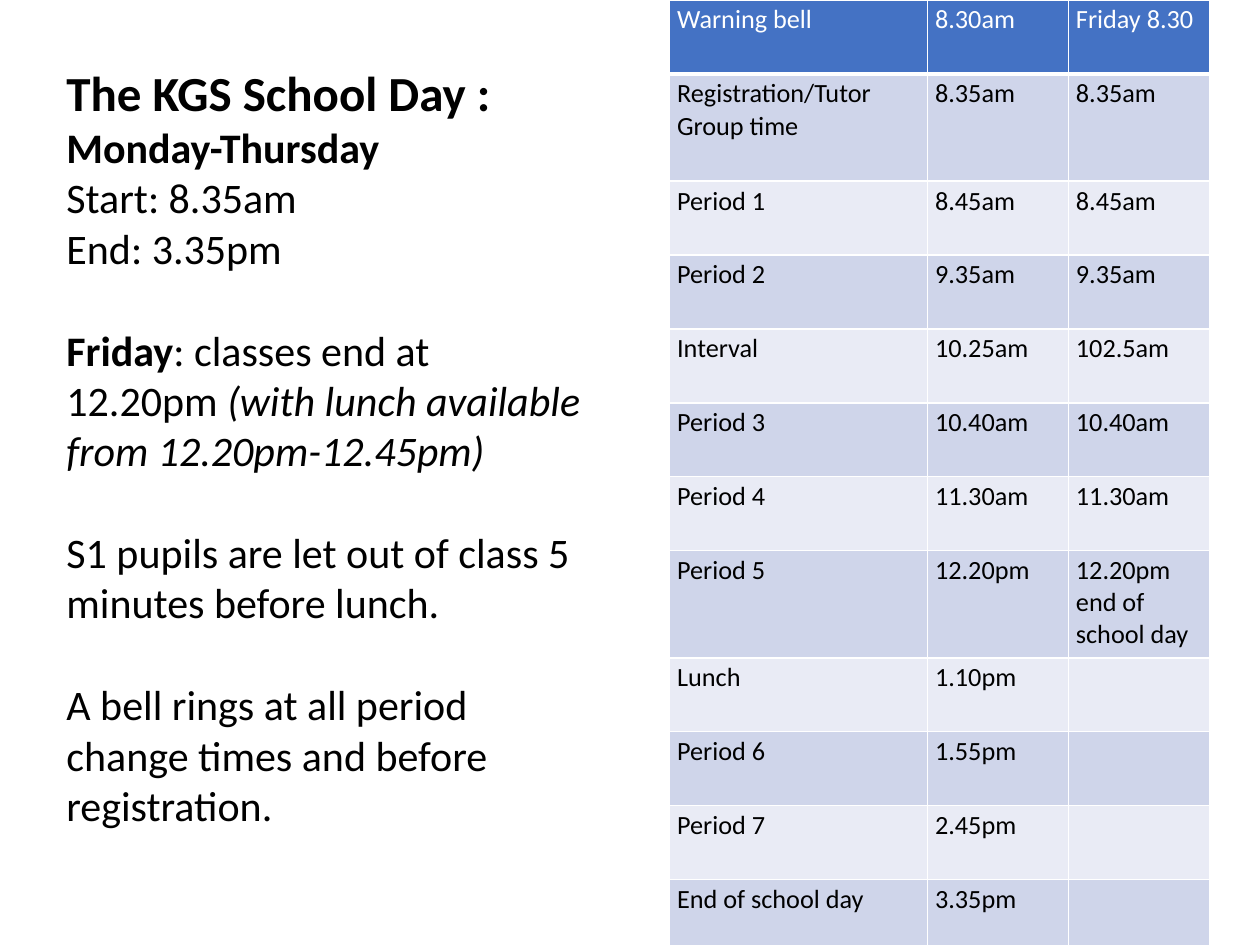
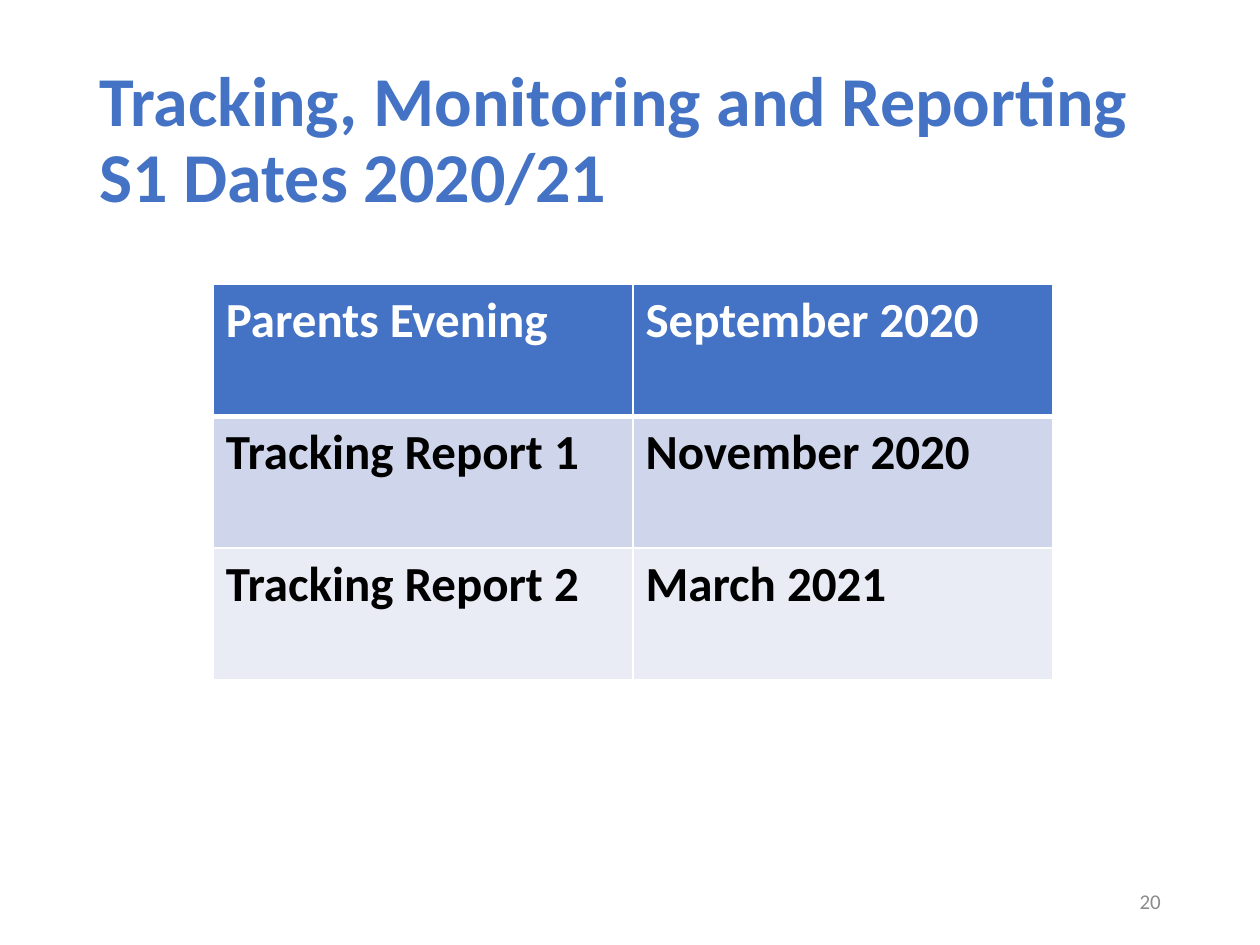
from lxml.etree import SubElement
from pptx import Presentation
from pptx.dml.color import RGBColor
from pptx.enum.text import MSO_ANCHOR, MSO_AUTO_SIZE, PP_ALIGN
from pptx.oxml.ns import qn
from pptx.util import Cm, Pt

COLORS = {
    "accent": "4472C4",
    "band_dark": "CFD5EA",
    "band_light": "E9EBF5",
    "text": "000000",
    "white": "FFFFFF",
    "muted": "8C8C8C",
}
FONT = "Calibri"
TITLE_ONLY, BLANK = 5, 6


class Deck:
    """Holds the shared style and the current slide."""

    def __init__(self):
        self.prs = Presentation()
        self.prs.slide_width, self.prs.slide_height = Cm(25.4), Cm(19.05)
        self.s = None

    def new_slide(self, layout):
        self.s = self.prs.slides.add_slide(self.prs.slide_layouts[layout])

    def style(self, p, size, color="text", bold=None):
        p.font.name, p.font.size, p.font.bold = FONT, Pt(size), bold
        p.font.color.rgb = RGBColor.from_string(COLORS[color])

    def title(self, text):
        sp = self.s.shapes.title
        sp.left, sp.top, sp.width, sp.height = Cm(1.75), Cm(1.02), Cm(21.9), Cm(3.68)
        tf = sp.text_frame
        tf.auto_size = MSO_AUTO_SIZE.NONE
        tf.vertical_anchor = MSO_ANCHOR.MIDDLE
        tf.text = text
        p = tf.paragraphs[0]
        p.alignment, p.line_spacing = PP_ALIGN.LEFT, 0.9
        self.style(p, 40, "accent", True)

    def text_box(self, left, top, width, height):
        tf = self.s.shapes.add_textbox(Cm(left), Cm(top), Cm(width), Cm(height)).text_frame
        tf.word_wrap = True
        return tf

    def page_number(self, number):
        tf = self.text_box(17.93, 17.65, 5.72, 1.02)
        tf.vertical_anchor = MSO_ANCHOR.MIDDLE
        p = tf.paragraphs[0]
        p.text = str(number)
        p.alignment = PP_ALIGN.RIGHT
        self.style(p, 12, "muted")

    def paragraphs(self, tf, items):
        """Each item: size, space before, list of (text, bold, italic)."""
        for i, (size, gap, runs) in enumerate(items):
            p = tf.add_paragraph() if i else tf.paragraphs[0]
            p.space_before = Pt(gap)
            for text, bold, italic in runs:
                r = p.add_run()
                r.text, r.font.bold, r.font.italic = text, bold, italic
            self.style(p, size)

    def borders(self, cell, bottom):
        tc_pr = cell._tc.get_or_add_tcPr()
        for side, width in (("L", 1), ("R", 1), ("T", 1), ("B", bottom)):
            ln = SubElement(tc_pr, qn(f"a:ln{side}"), w=str(Pt(width)))
            fill = SubElement(ln, qn("a:solidFill"))
            SubElement(fill, qn("a:srgbClr"), val=COLORS["white"])

    def table(self, left, top, widths, heights, rows, size, bold=False, margins=None):
        table = self.s.shapes.add_table(
            len(rows), len(widths), Cm(left), Cm(top), Cm(sum(widths)), Cm(sum(heights))
        ).table
        table.first_row = table.horz_banding = False
        for column, width in zip(table.columns, widths):
            column.width = Cm(width)
        for i, (row, height) in enumerate(zip(rows, heights)):
            table.rows[i].height = Cm(height)
            band = "accent" if i == 0 else "band_dark" if i % 2 else "band_light"
            for j, text in enumerate(row):
                cell = table.cell(i, j)
                self.borders(cell, 1 if i else 3)
                cell.fill.solid()
                cell.fill.fore_color.rgb = RGBColor.from_string(COLORS[band])
                if margins:
                    cell.margin_left = cell.margin_right = Cm(margins[0])
                    cell.margin_top = cell.margin_bottom = Cm(margins[1])
                cell.text = text
                for p in cell.text_frame.paragraphs:
                    self.style(p, size, "text" if i else "white", bold)


def school_day(deck):
    deck.new_slide(BLANK)

    # Timetable
    timetable = [
        ("Warning bell", "8.30am", "Friday 8.30"),
        ("Registration/Tutor Group time", "8.35am", "8.35am"),
        ("Period 1", "8.45am", "8.45am"),
        ("Period 2", "9.35am", "9.35am"),
        ("Interval", "10.25am", "102.5am"),
        ("Period 3", "10.40am", "10.40am"),
        ("Period 4", "11.30am", "11.30am"),
        ("Period 5", "12.20pm", "12.20pm\nend of school day"),
        ("Lunch", "1.10pm", ""),
        ("Period 6", "1.55pm", ""),
        ("Period 7", "2.45pm", ""),
        ("End of school day", "3.35pm", ""),
    ]
    tall_rows = ("Registration/Tutor Group time", "Period 5")
    heights = [2.16 if row[0] in tall_rows else 1.49 for row in timetable]
    deck.table(13.5, 0, (5.2, 2.84, 2.84), heights, timetable, 15, margins=(0.15, 0.08))

    # Summary of the week
    gap = 29.3
    deck.paragraphs(deck.text_box(1.09, 1.14, 11.05, 16.59), [
        (28, 0, [("The KGS School Day :", True, False)]),
        (24, 0, [("Monday-Thursday", True, False)]),
        (24, 0, [("Start: 8.35am", False, False)]),
        (24, 0, [("End: 3.35pm", False, False)]),
        (24, gap, [
            ("Friday", True, False),
            (": classes end at 12.20pm ", False, False),
            ("(with lunch available from 12.20pm-12.45pm)", False, True),
        ]),
        (24, gap, [("S1 pupils are let out of class 5 minutes before lunch.", False, False)]),
        (24, gap, [("A bell rings at all period change times and before registration.",
                    False, False)]),
    ])


def report_dates(deck):
    deck.new_slide(TITLE_ONLY)
    deck.title("Tracking, Monitoring and Reporting\vS1 Dates 2020/21")
    deck.page_number(20)

    # Dates
    dates = [
        ("Parents Evening", "September 2020"),
        ("Tracking Report 1", "November 2020"),
        ("Tracking Report 2", "March 2021"),
    ]
    deck.table(4.3, 5.73, [8.46] * 2, [2.66] * 3, dates, 28, bold=True)


def main():
    deck = Deck()
    school_day(deck)
    report_dates(deck)
    deck.prs.save("out.pptx")


if __name__ == "__main__":
    main()
